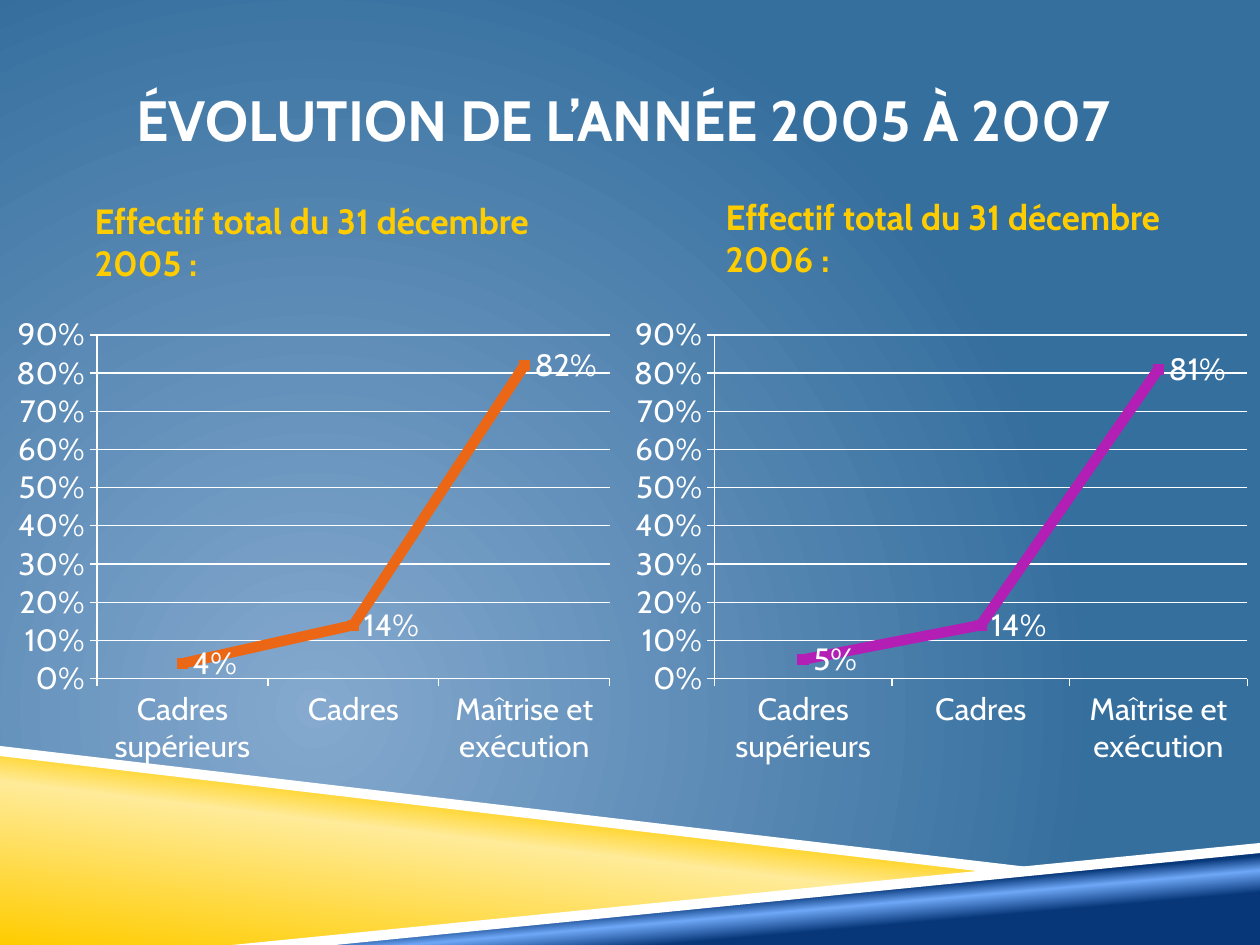
from lxml import etree
from pptx import Presentation
from pptx.chart.data import CategoryChartData
from pptx.dml.color import RGBColor
from pptx.enum.chart import (XL_CHART_TYPE, XL_LABEL_POSITION as LabelPos,
                             XL_MARKER_STYLE as Marker, XL_TICK_MARK as Tick)
from pptx.enum.text import MSO_ANCHOR as Anchor, PP_ALIGN as Align
from pptx.oxml import parse_xml
from pptx.oxml.ns import nsdecls, qn
from pptx.util import Inches, Pt

FONT = "Cabin"
WHITE, GOLD, NAVY, SKY = "FFFFFF", "FFCC00", "073779", "6FA8F7"
CATEGORIES = ["Cadres supérieurs", "Cadres", "Maîtrise et exécution"]


def rgb(value):
    return RGBColor.from_string(value)


def grad_fill(stops, direction):
    """Gradient element from (percent, colour) stops and a direction element."""
    gs = "".join(f'<a:gs pos="{pos * 1000}"><a:srgbClr val="{color}"/></a:gs>'
                 for pos, color in stops)
    return parse_xml(f'<a:gradFill {nsdecls("a")} rotWithShape="1">'
                     f'<a:gsLst>{gs}</a:gsLst>{direction}</a:gradFill>')


def set_background(slide):
    slide.background.fill.solid()
    bg_pr = slide.background._cSld.bg.bgPr
    circle = ('<a:path path="circle"><a:fillToRect l="50000" t="100000" '
              'r="100000" b="50000"/></a:path>')
    bg_pr.replace(bg_pr[0], grad_fill([(0, "85A9CF"), (100, "356F9E")], circle))


def add_band(slide, points, color=None, stops=None, angle=0):
    """Closed outline with a plain or a linear gradient fill."""
    points = [(Inches(x), Inches(y)) for x, y in points]
    builder = slide.shapes.build_freeform(*points[0])
    builder.add_line_segments(points[1:], close=True)
    s = builder.convert_to_shape()
    s.shadow.inherit = False
    s.line.fill.background()
    s.fill.solid()
    if stops:
        linear = f'<a:lin ang="{angle * 60000}" scaled="0"/>'
        solid = s._element.spPr.find(qn("a:solidFill"))
        solid.getparent().replace(solid, grad_fill(stops, linear))
    else:
        s.fill.fore_color.rgb = rgb(color)


def add_text(slide, text, x, y, w, h, size=20, color=GOLD,
             align=Align.LEFT, anchor=Anchor.BOTTOM):
    tf = slide.shapes.add_textbox(Inches(x), Inches(y), Inches(w), Inches(h)).text_frame
    tf.word_wrap = True
    tf.vertical_anchor = anchor
    tf.margin_left = tf.margin_right = 0
    p = tf.paragraphs[0]
    p.alignment = align
    r = p.add_run()
    r.text = text
    r.font.name, r.font.size, r.font.bold = FONT, Pt(size), True
    r.font.color.rgb = rgb(color)


def white_line(fmt):
    fmt.line.color.rgb = rgb(WHITE)
    fmt.line.width = Pt(0.75)


def set_plot_area(chart, w, h):
    """Fix the inner plot area inside a chart of w by h inches."""
    left, top, right, plot_h = 0.73, 0.07, 0.1, 2.79
    layout = {"x": left / w, "y": top / h,
              "w": (w - left - right) / w, "h": plot_h / h}
    plot_area = chart._chartSpace.chart.plotArea
    for old in plot_area.findall(qn("c:layout")):
        plot_area.remove(old)
    manual = etree.Element(qn("c:manualLayout"))
    settings = {"layoutTarget": "inner", "xMode": "edge", "yMode": "edge", **layout}
    for tag, val in settings.items():
        etree.SubElement(manual, qn(f"c:{tag}")).set("val", str(val))
    node = etree.Element(qn("c:layout"))
    node.append(manual)
    plot_area.insert(0, node)


def add_line_chart(slide, values, x, w, color):
    y, h = 2.51, 3.64
    data = CategoryChartData(number_format="0%")
    data.categories = CATEGORIES
    data.add_series("Series 1", values)
    chart = slide.shapes.add_chart(XL_CHART_TYPE.LINE_MARKERS, Inches(x), Inches(y),
                                   Inches(w), Inches(h), data).chart
    chart.has_legend = chart.has_title = False
    chart.font.name, chart.font.size = FONT, Pt(18)
    chart.font.color.rgb = rgb(WHITE)
    set_plot_area(chart, w, h)

    # Axes
    for axis in (chart.category_axis, chart.value_axis):
        axis.major_tick_mark, axis.minor_tick_mark = Tick.OUTSIDE, Tick.NONE
        white_line(axis.format)
    val = chart.value_axis
    val.minimum_scale, val.maximum_scale, val.major_unit = 0, 0.9, 0.1
    val.has_major_gridlines = True
    white_line(val.major_gridlines.format)
    val.tick_labels.number_format = "0%"
    val.tick_labels.number_format_is_linked = False

    # Series and its labels
    plot = chart.plots[0]
    plot.vary_by_categories = False
    series = plot.series[0]
    series.smooth = False
    series.format.line.color.rgb = rgb(color)
    series.format.line.width = Pt(6)
    series.marker.style, series.marker.size = Marker.SQUARE, 6
    series.marker.format.fill.solid()
    series.marker.format.fill.fore_color.rgb = rgb(color)
    series.marker.format.line.color.rgb = rgb(color)
    labels = series.data_labels
    labels.show_value = True
    labels.number_format, labels.number_format_is_linked = "0%", False
    labels.position = LabelPos.RIGHT
    labels.font.name, labels.font.size = FONT, Pt(18)
    labels.font.color.rgb = rgb(WHITE)


def main():
    prs = Presentation()
    prs.slide_width, prs.slide_height = Inches(10), Inches(7.5)
    slide = prs.slides.add_slide(prs.slide_layouts[6])
    set_background(slide)

    # Bands along the bottom
    add_band(slide, [(1.98, 7.5), (10, 6.72), (10, 7.5)],
             stops=[(28, NAVY), (40, SKY), (48, NAVY)], angle=265)
    add_band(slide, [(0, 5.97), (7.92, 6.92), (2, 7.5), (0, 7.5)],
             stops=[(0, GOLD), (52, "FFEB99"), (66, GOLD)], angle=277)
    add_band(slide, [(0, 5.92), (0, 6), (7.9, 6.93), (8.32, 6.9)], WHITE)
    add_band(slide, [(10, 6.69), (1.84, 7.5), (2.66, 7.5), (10, 6.77)], WHITE)

    # Headings
    add_text(slide, "ÉVOLUTION DE L’ANNÉE 2005 À 2007 ", 0.75, 0.32, 8.5, 1.25,
             size=32.4, color=WHITE, align=Align.CENTER, anchor=Anchor.MIDDLE)
    add_text(slide, "Effectif total du 31 décembre 2005 :", 0.75, 1.6, 4.19, 0.7)
    add_text(slide, "Effectif total du 31 décembre 2006 :", 5.76, 1.57, 4.04, 0.7)

    # One chart per year
    add_line_chart(slide, (0.04, 0.14, 0.82), 0.04, 4.9, "EB6615")
    add_line_chart(slide, (0.05, 0.14, 0.81), 4.94, 5.06, "B31FB5")
    prs.save("out.pptx")


if __name__ == "__main__":
    main()
